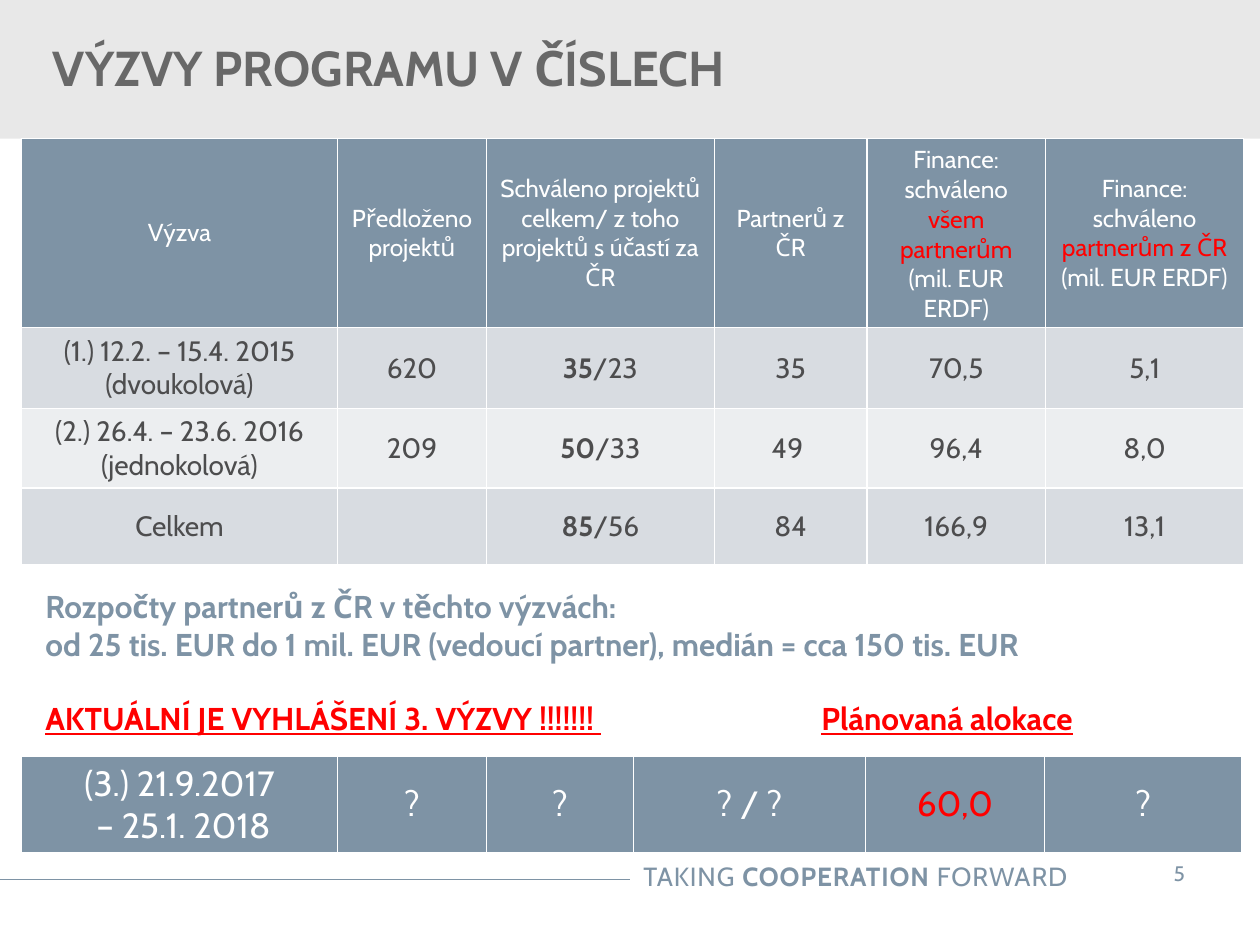
"""Build the slide on programme calls in figures."""
from dataclasses import dataclass

from lxml.etree import SubElement
from pptx import Presentation
from pptx.dml.color import RGBColor
from pptx.enum.shapes import MSO_CONNECTOR, MSO_SHAPE
from pptx.enum.text import MSO_ANCHOR, PP_ALIGN
from pptx.oxml.ns import qn
from pptx.util import Inches, Pt

HUES = {"slate": "7E93A5", "band": "E8E8E8", "title": "686868", "white": "FFFFFF",
        "red": "FF0000", "ink": "4D4D4E", "dark": "D8DCE1", "light": "ECEEF0"}


@dataclass(frozen=True)
class Look:
    size: float
    hue: str
    bold: bool = False
    line: bool = False
    align: PP_ALIGN = PP_ALIGN.LEFT


@dataclass(frozen=True)
class Bit:
    text: str
    hue: str = ""
    bold: bool = False
    plain: bool = False


@dataclass(frozen=True)
class Row:
    high: float
    fill: str
    look: Look
    cells: tuple


@dataclass(frozen=True)
class Note:
    box: tuple
    look: Look
    lines: tuple
    pad: tuple = (0.1, 0.05)
    tab: float = 0


HEAD = Look(14, "white", align=PP_ALIGN.CENTER)
BODY = Look(16, "ink", align=PP_ALIGN.CENTER)
NEXT = Look(20, "white", align=PP_ALIGN.CENTER)


def money(whom: str) -> tuple:
    return ((Bit("Finance: schváleno "), Bit(whom, "red"), Bit("(mil. EUR ERDF)")),)


def share(total: str, czech: str) -> tuple:
    return ((Bit(total, bold=True), Bit("/" + czech)),)


CALLS = (
    Row(1.5, "slate", HEAD, (
        "Výzva", "Předloženo projektů",
        "Schváleno projektů celkem/ z toho projektů s účastí za ČR",
        "Partnerů z ČR", money("všem partnerům "), money("partnerům z ČR "))),
    Row(0.64, "dark", BODY, (
        ("(1.) 12.2. – 15.4. 2015", "(dvoukolová)"), "620", share("35", "23"),
        "35", "70,5", "5,1")),
    Row(0.63, "light", BODY, (
        ("(2.) 26.4. – 23.6. 2016", "(jednokolová)"), "209", share("50", "33"),
        "49 ", "96,4", "8,0")),
    Row(0.61, "dark", BODY, (
        "Celkem", "", share("85", "56"), "84", "166,9", "13,1")),
)
THIRD = (Row(0.75, "slate", NEXT, (
    ("(3.) 21.9.2017", " – 25.1. 2018"), "?", "?", "? / ?",
    ((Bit("60,0", "red"),),), "?")),)

NOTES = (
    Note((0.28, 4.62, 9.45, 0.69), Look(18, "slate", True),
         ("Rozpočty partnerů z ČR v těchto výzvách:",
          "od 25 tis. EUR do 1 mil. EUR (vedoucí partner), medián = cca 150 tis. EUR"),
         (0.08, 0.04)),
    Note((0.28, 5.51, 9.69, 0.39), Look(18, "red", True, True),
         ((Bit("AKTUÁLNÍ JE VYHLÁŠENÍ 3. VÝZVY !!!!!!! "), Bit("\t", plain=True),
           Bit("Plánovaná alokace")),), (0.08, 0.04), 6.16),
)
MOTTO = Note((3.88, 6.78, 4.69, 0.35), Look(15, "slate", align=PP_ALIGN.RIGHT),
             ((Bit("TAKING "), Bit("COOPERATION", bold=True), Bit(" FORWARD")),))
PAGE = Note((8.99, 6.73, 0.74, 0.4), Look(12, "slate", align=PP_ALIGN.CENTER),
            (), (0.2, 0.1))


def tint(hue: str) -> RGBColor:
    return RGBColor.from_string(HUES[hue])


def style(para, look: Look) -> None:
    para.alignment = look.align
    font = para.font
    font.name, font.size = "Cabin", Pt(look.size)
    font.bold, font.underline = look.bold, look.line
    font.color.rgb = tint(look.hue)


def write(frame, lines: tuple, look: Look, tab: float = 0) -> None:
    for i, line in enumerate(lines):
        para = frame.paragraphs[0] if i == 0 else frame.add_paragraph()
        if tab:
            stops = SubElement(para._p.get_or_add_pPr(), qn("a:tabLst"))
            SubElement(stops, qn("a:tab"), pos=str(Inches(tab)), algn="l")
        style(para, look)
        for bit in (Bit(line),) if isinstance(line, str) else line:
            run = para.add_run()
            run.text = bit.text
            if bit.hue:
                run.font.color.rgb = tint(bit.hue)
            if bit.bold:
                run.font.bold = True
            if bit.plain:
                run.font.underline = False


def add_note(slide, note: Note):
    frame = slide.shapes.add_textbox(*map(Inches, note.box)).text_frame
    frame.word_wrap = True
    frame.margin_left = frame.margin_right = Inches(note.pad[0])
    frame.margin_top = frame.margin_bottom = Inches(note.pad[1])
    write(frame, note.lines, note.look, note.tab)
    return frame


def edge(cell) -> None:
    props = cell._tc.get_or_add_tcPr()
    for i, side in enumerate(("lnL", "lnR", "lnT", "lnB")):
        line = props.makeelement(qn("a:" + side), {"w": str(Pt(1))})
        fill = SubElement(line, qn("a:solidFill"))
        SubElement(fill, qn("a:srgbClr"), val=HUES["white"])
        props.insert(i, line)


def add_grid(slide, top: float, cols: tuple, rows: tuple) -> None:
    high = sum(row.high for row in rows)
    grid = slide.shapes.add_table(len(rows), len(cols), Inches(0.17), Inches(top),
                                  Inches(sum(cols)), Inches(high)).table
    grid.first_row = grid.horz_banding = False
    for col, wide in zip(grid.columns, cols):
        col.width = Inches(wide)
    for r, row in enumerate(rows):
        grid.rows[r].height = Inches(row.high)
        for c, text in enumerate(row.cells):
            cell = grid.cell(r, c)
            cell.vertical_anchor = MSO_ANCHOR.MIDDLE
            cell.fill.solid()
            cell.fill.fore_color.rgb = tint(row.fill)
            edge(cell)
            write(cell.text_frame, (text,) if isinstance(text, str) else text, row.look)


def add_top(slide) -> None:
    band = slide.shapes.add_shape(MSO_SHAPE.RECTANGLE, 0, 0, Inches(10), Inches(1.1))
    band.shadow.inherit = False
    band.fill.solid()
    band.fill.fore_color.rgb = tint("band")
    band.line.fill.background()
    title = slide.shapes.title
    title._element.addprevious(band._element)
    title.left, title.top, title.width, title.height = map(Inches, (0.08, 0.16, 7.13, 0.75))
    frame = title.text_frame
    frame.margin_left = Inches(0.34)
    frame.vertical_anchor = MSO_ANCHOR.MIDDLE
    write(frame, ("VÝZVY PROGRAMU V ČÍSLECH",), Look(28, "title", True))


def add_foot(slide) -> None:
    rule = slide.shapes.add_connector(MSO_CONNECTOR.STRAIGHT, 0, Inches(6.98),
                                      Inches(5), Inches(6.98))
    rule.line.color.rgb = tint("slate")
    rule.line.width = Pt(0.75)
    SubElement(rule._element.spPr, qn("a:effectLst"))
    for run in add_note(slide, MOTTO).paragraphs[0].runs:
        run.font._element.set("spc", "50")
    para = add_note(slide, PAGE).paragraphs[0]
    style(para, PAGE.look)
    field = SubElement(para._p, qn("a:fld"), type="slidenum",
                       id="{B6F15528-21DE-4FAA-801E-634DDDAF4B2B}")
    SubElement(field, qn("a:rPr"), lang="cs-CZ")
    SubElement(field, qn("a:t")).text = "5"


def main() -> None:
    deck = Presentation()
    deck.slide_width, deck.slide_height = Inches(10), Inches(7.5)
    deck._element.set("firstSlideNum", "5")
    slide = deck.slides.add_slide(deck.slide_layouts[5])
    add_top(slide)
    add_foot(slide)
    add_grid(slide, 1.1, (2.51, 1.18, 1.81, 1.21, 1.42, 1.57), CALLS)
    add_grid(slide, 6, (2.51, 1.18, 1.17, 1.84, 1.42, 1.57), THIRD)
    for note in NOTES:
        add_note(slide, note)
    deck.save("out.pptx")


if __name__ == "__main__":
    main()
